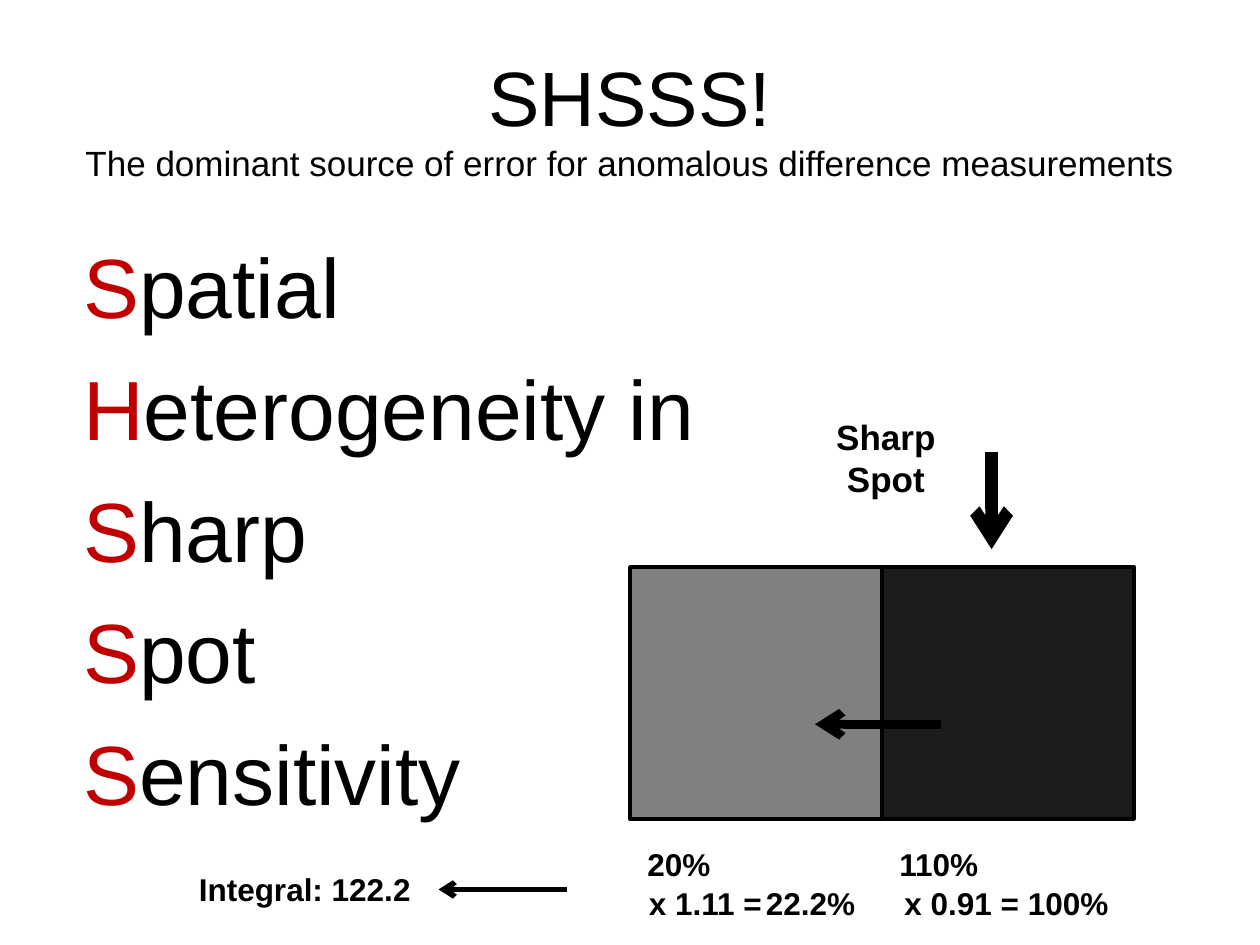
"""Build the SHSSS! slide on spatial heterogeneity in sharp spot sensitivity."""
from lxml.etree import SubElement
from pptx import Presentation
from pptx.dml.color import RGBColor as RGB
from pptx.enum.shapes import MSO_CONNECTOR as CONN, MSO_SHAPE as SHAPE
from pptx.enum.text import MSO_ANCHOR as ANCHOR, MSO_AUTO_SIZE as FIT, PP_ALIGN as ALIGN
from pptx.oxml.ns import qn
from pptx.util import Cm, Pt

THEME = {
    "font": "Arial", "black": "000000", "red": "C00000",
    "light": "808080", "dark": "1C1C1C",
    "title": 44, "subtitle": 20, "body": 48, "spot": 20, "label": 18,
}
TITLE = ("SHSSS!", "The dominant source of error for anomalous difference measurements")
TITLE_BOX = (1.27, 0.76, 22.86, 3.18)
WORDS = ["Spatial", "Heterogeneity in", "Sharp", "Spot", "Sensitivity"]
BODY_BOX = (1.42, 4.45, 13.23, 12.57)

PIXEL_LEFT, PIXEL_TOP, PIXEL_SIZE = 12.7, 11.43, 5.08
PIXELS = ["light", "dark"]
ARROWS = [
    ((18.97, 14.6), (16.43, 14.6), 5),
    ((19.99, 9.12), (19.99, 11.07), 7),
    ((11.43, 17.93), (8.84, 17.93), 3),
]
SPOT_LABEL = (["Sharp", "Spot"], (16.59, 8.26, 2.54, 1.96))
READING_TOP, SCALED_TOP, LABEL_HEIGHT = 16.92, 17.7, 1.02
LABELS = [
    ("20%", 12.8, READING_TOP, 4.98),
    ("110%", 17.88, READING_TOP, 5.26),
    ("x 1.11 =", 12.83, SCALED_TOP, 2.9),
    ("x 0.91 =", 17.98, SCALED_TOP, 3.18),
    ("100%", 20.47, SCALED_TOP, 2.39),
    ("22.2%", 15.19, SCALED_TOP, 2.59),
    ("Integral: 122.2", 3.76, 17.42, 4.98),
]


def color(name):
    return RGB.from_string(THEME[name])


def lengths(box):
    return [Cm(v) for v in box]


def place(sp, box):
    values = dict(zip(("left", "top", "width", "height"), lengths(box)))
    for name, value in values.items():
        setattr(sp, name, value)


def add_run(p, text, size, tint="black", bold=False):
    r = p.add_run()
    r.text = text
    style = {"name": THEME["font"], "size": Pt(THEME[size]), "bold": bold}
    for name, value in style.items():
        setattr(r.font, name, value)
    r.font.color.rgb = color(tint)


def paragraphs(tf, items):
    for i, item in enumerate(items):
        yield (tf.add_paragraph() if i else tf.paragraphs[0]), item


def fill_title(sp):
    place(sp, TITLE_BOX)
    tf = sp.text_frame
    tf.auto_size, tf.vertical_anchor = FIT.NONE, ANCHOR.MIDDLE
    p = tf.paragraphs[0]
    p.alignment = ALIGN.CENTER
    add_run(p, TITLE[0], "title")
    p.add_line_break()
    add_run(p, TITLE[1], "subtitle")


def fill_body(sp):
    place(sp, BODY_BOX)
    tf = sp.text_frame
    tf.auto_size, tf.margin_top = FIT.NONE, Cm(0.28)
    for i, (p, word) in enumerate(paragraphs(tf, WORDS)):
        pPr = p._p.get_or_add_pPr()
        pPr.set("marL", "0")
        pPr.set("indent", "0")
        SubElement(pPr, qn("a:buNone"))
        p.space_before = Pt(12 if i else 0)
        add_run(p, word[0], "body", "red")
        add_run(p, word[1:], "body")


def add_pixel(shapes, column, tint):
    left = PIXEL_LEFT + column * PIXEL_SIZE
    sp = shapes.add_shape(SHAPE.RECTANGLE, *lengths((left, PIXEL_TOP, PIXEL_SIZE, PIXEL_SIZE)))
    sp.shadow.inherit = False
    sp.fill.solid()
    sp.fill.fore_color.rgb = color(tint)
    sp.line.color.rgb = color("black")
    sp.line.width = Pt(2)


def add_arrow(shapes, start, end, width):
    cx = shapes.add_connector(CONN.STRAIGHT, *lengths(start + end))
    cx.line.color.rgb = color("black")
    cx.line.width = Pt(width)
    SubElement(cx.line._get_or_add_ln(), qn("a:tailEnd"), type="arrow")
    SubElement(cx._element.spPr, qn("a:effectLst"))


def add_label(shapes, lines, box, size="label", align=ALIGN.LEFT, wrap=True):
    tf = shapes.add_textbox(*lengths(box)).text_frame
    tf.word_wrap, tf.auto_size = wrap, FIT.SHAPE_TO_FIT_TEXT
    for p, line in paragraphs(tf, lines):
        p.alignment = align
        add_run(p, line, size, bold=True)


def main():
    prs = Presentation()
    prs.slide_width, prs.slide_height = Cm(25.4), Cm(19.05)
    s = prs.slides.add_slide(prs.slide_layouts[1])
    fill_title(s.shapes.title)
    fill_body(s.placeholders[1])
    for column, tint in enumerate(PIXELS):
        add_pixel(s.shapes, column, tint)
    for arrow in ARROWS:
        add_arrow(s.shapes, *arrow)
    add_label(s.shapes, *SPOT_LABEL, size="spot", align=ALIGN.CENTER, wrap=False)
    for text, left, top, width in LABELS:
        add_label(s.shapes, [text], (left, top, width, LABEL_HEIGHT))
    prs.save("out.pptx")


if __name__ == "__main__":
    main()
